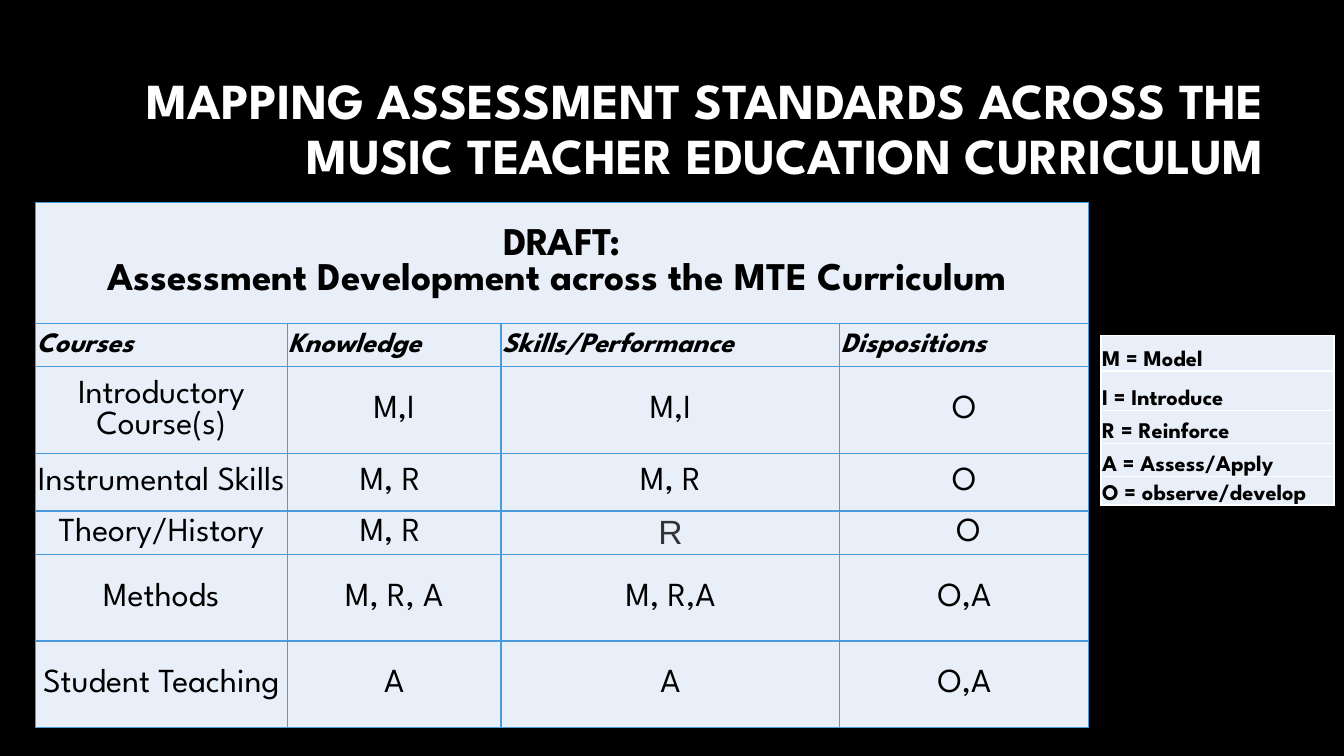
from dataclasses import dataclass

from lxml.etree import SubElement as Sub
from pptx import Presentation
from pptx.dml.color import RGBColor
from pptx.enum.text import MSO_ANCHOR as Anchor, PP_ALIGN as Align
from pptx.oxml.ns import qn
from pptx.util import Inches, Pt

BLACK = RGBColor(0x00, 0x00, 0x00)
WHITE = RGBColor(0xFF, 0xFF, 0xFF)
PALE = RGBColor(0xE9, 0xEF, 0xF9)
BLUE = RGBColor(0x4A, 0x9B, 0xDC)
GRAY = RGBColor(0x33, 0x33, 0x33)


@dataclass
class Style:
    size: int
    bold: bool = False
    slant: bool = False
    align: Align = Align.LEFT
    anchor: Anchor = Anchor.MIDDLE
    color: RGBColor = BLACK
    face: str = "League Spartan"


@dataclass
class Grid:
    left: float
    top: float
    cols: list[float]
    rows: list[float]
    line: RGBColor
    texts: list[list[str]]
    styles: list[Style]


TITLE = Style(36, bold=True, align=Align.RIGHT, color=WHITE)
DRAFT = Style(28, bold=True, align=Align.CENTER)
HEAD = Style(20, bold=True, slant=True)
BODY = Style(24, align=Align.CENTER)
PLAIN = Style(24, align=Align.CENTER, color=GRAY, face="Arial")
KEY = Style(16, bold=True, anchor=Anchor.BOTTOM)

COURSES = Grid(
    0.35, 2.01, [2.5, 2.12, 3.36, 2.47],
    [1.2, 0.43, 0.86, 0.57, 0.43, 0.86, 0.86], BLUE,
    [
        ["DRAFT:\nAssessment Development across the MTE Curriculum ", "", "", ""],
        ["Courses", "Knowledge", "Skills/Performance", "Dispositions"],
        ["Introductory Course(s)", "M,I", "M,I", "O"],
        ["Instrumental Skills", "M, R ", "M, R", "O"],
        ["Theory/History", "M, R ", "R", " O"],
        ["Methods", "M, R, A", "M, R,A", "O,A"],
        ["Student Teaching", "A", "A", "O,A"],
    ],
    [DRAFT, HEAD] + [BODY] * 5,
)
LEGEND = Grid(
    10.92, 3.33, [2.31], [0.35, 0.39, 0.33, 0.33, 0.28], WHITE,
    [["M = Model"], ["I = Introduce"], ["R = Reinforce"],
     ["A = Assess/Apply"], ["O = observe/develop"]],
    [KEY] * 5,
)


def dress(frame, style: Style) -> None:
    for para in frame.paragraphs:
        para.alignment = style.align
        for run in para.runs:
            font = run.font
            font.name, font.size = style.face, Pt(style.size)
            font.bold, font.italic = style.bold, style.slant
            font.color.rgb = style.color


def border(cell, color: RGBColor) -> None:
    props = cell._tc.get_or_add_tcPr()
    for side in ("lnL", "lnR", "lnT", "lnB"):
        line = Sub(props, qn(f"a:{side}"), w=str(Pt(1)))
        fill = Sub(line, qn("a:solidFill"))
        Sub(fill, qn("a:srgbClr"), val=str(color))


def fill_cell(cell, text: str, style: Style, line: RGBColor) -> None:
    border(cell, line)
    cell.fill.solid()
    cell.fill.fore_color.rgb = PALE
    cell.margin_left = cell.margin_right = cell.margin_top = Inches(0.01)
    cell.margin_bottom = 0
    cell.vertical_anchor = style.anchor
    cell.text_frame.text = text
    dress(cell.text_frame, style)


def add_grid(slide, grid: Grid):
    table = slide.shapes.add_table(
        len(grid.rows), len(grid.cols), Inches(grid.left), Inches(grid.top),
        Inches(sum(grid.cols)), Inches(sum(grid.rows))).table
    table.first_row = table.horz_banding = False
    for col, width in zip(table.columns, grid.cols):
        col.width = Inches(width)
    for row, height in zip(table.rows, grid.rows):
        row.height = Inches(height)
    for row, texts, style in zip(table.rows, grid.texts, grid.styles):
        for cell, text in zip(row.cells, texts):
            fill_cell(cell, text, style, grid.line)
    return table


def add_title(slide, text: str) -> None:
    frame = slide.shapes.add_textbox(
        Inches(0.43), Inches(0.59), Inches(12.21), Inches(1.41)).text_frame
    frame.word_wrap = True
    frame.vertical_anchor = TITLE.anchor
    frame.text = text
    frame.paragraphs[0].line_spacing = 0.9
    dress(frame, TITLE)


def main() -> None:
    deck = Presentation()
    deck.slide_width, deck.slide_height = Inches(13.33), Inches(7.5)
    slide = deck.slides.add_slide(deck.slide_layouts[6])
    back = slide.background.fill
    back.solid()
    back.fore_color.rgb = BLACK
    add_title(slide, "MAPPING ASSESSMENT STANDARDS ACROSS THE "
                     "MUSIC TEACHER EDUCATION CURRICULUM")
    table = add_grid(slide, COURSES)
    table.cell(0, 0).merge(table.cell(0, 3))
    dress(table.cell(4, 2).text_frame, PLAIN)
    add_grid(slide, LEGEND)
    deck.save("out.pptx")


if __name__ == "__main__":
    main()
